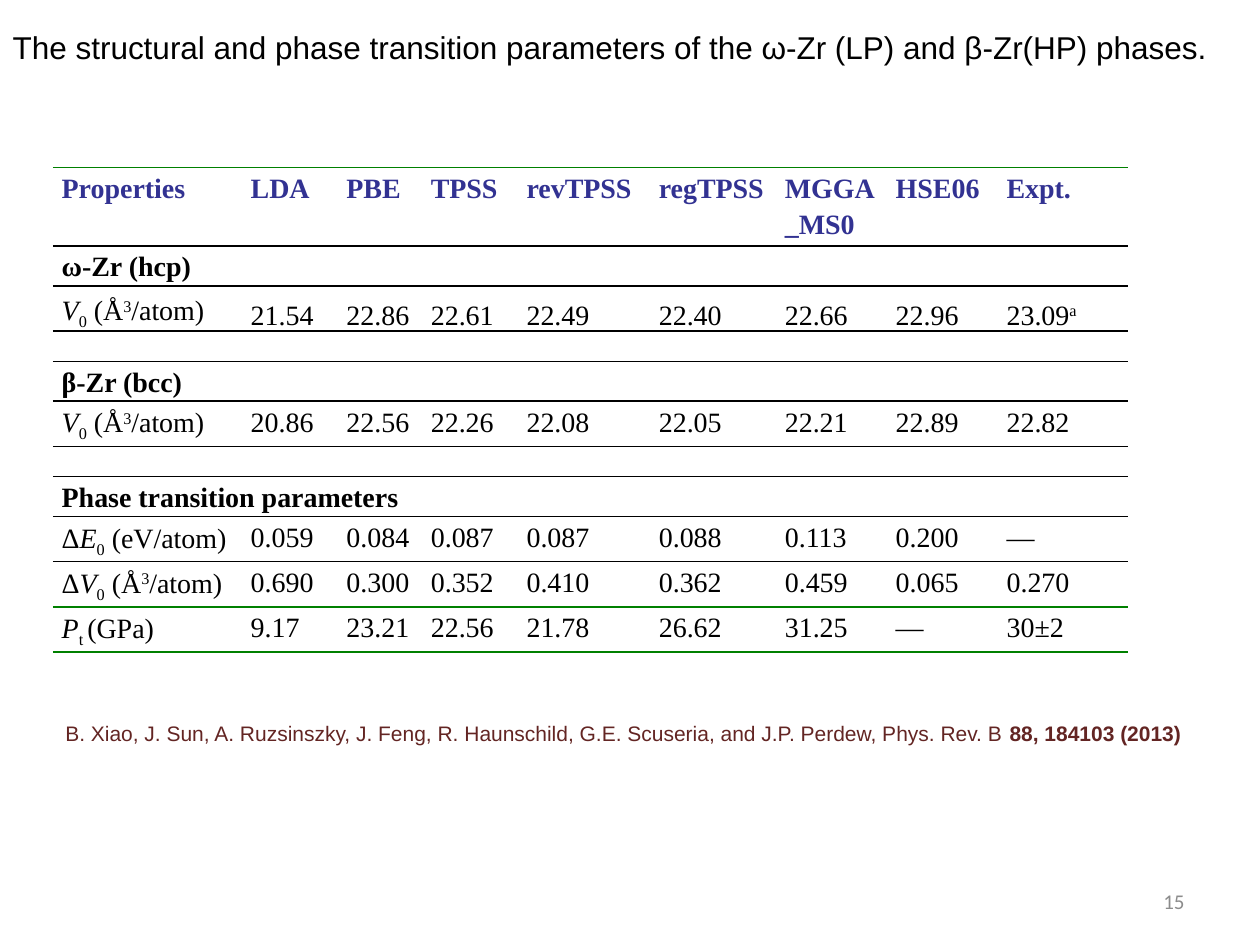
from dataclasses import dataclass

import pptx
import pptx.dml.color
import pptx.enum.text
import pptx.oxml
import pptx.oxml.ns
import pptx.util
from pptx.enum.text import MSO_ANCHOR, PP_ALIGN
from pptx.util import Inches

BLACK = pptx.dml.color.RGBColor(0x00, 0x00, 0x00)
NAVY = pptx.dml.color.RGBColor(0x32, 0x32, 0x92)
GREEN = pptx.dml.color.RGBColor(0x00, 0x80, 0x00)
MAROON = pptx.dml.color.RGBColor(0x63, 0x25, 0x23)
GRAY = pptx.dml.color.RGBColor(0x8C, 0x8C, 0x8C)

SUB, SUPER = -25, 30  # baseline shift in percent
NO_GRID_STYLE = "{2D5ABB26-0587-4C30-8999-92F81FD0307C}"
COLUMN_WIDTHS = [1.5, 0.76, 0.67, 0.76, 1.05, 1, 0.88, 0.88, 1.03]


@dataclass(frozen=True)
class Piece:
    text: str
    italic: bool = False
    bold: bool = False
    baseline: int = 0


@dataclass(frozen=True)
class Row:
    label: list
    values: tuple = ()
    height: float = 0.24
    top: pptx.dml.color.RGBColor | None = None
    bottom: pptx.dml.color.RGBColor | None = None
    color: pptx.dml.color.RGBColor = BLACK
    anchor: MSO_ANCHOR = MSO_ANCHOR.TOP


def bold(text: str) -> list:
    return [Piece(text, bold=True)]


def plain(text: str) -> list:
    return [Piece(text)]


def quantity(symbol: str, index: str, unit: list) -> list:
    return [Piece(symbol, italic=True), Piece(index, baseline=SUB), *unit]


PER_ATOM = [Piece(" (Å"), Piece("3", baseline=SUPER), Piece("/atom)")]
VOLUME = quantity("V", "0", PER_ATOM)
METHODS = "LDA PBE TPSS revTPSS regTPSS MGGA_MS0 HSE06 Expt."


def numbers(text: str) -> tuple:
    return tuple(plain(value) for value in text.split())


ROWS = [
    Row(bold("Properties"), tuple(bold(name) for name in METHODS.split()),
        0.47, GREEN, BLACK, NAVY),
    Row(bold("ω-Zr (hcp)"), top=BLACK, bottom=BLACK),
    Row(VOLUME, (*numbers("21.54 22.86 22.61 22.49 22.40 22.66 22.96"),
                 [Piece("23.09"), Piece("a", baseline=SUPER)]),
        top=BLACK, anchor=MSO_ANCHOR.BOTTOM),
    Row([], bottom=BLACK),
    Row(bold("β-Zr (bcc)"), height=0.28, top=BLACK, bottom=BLACK),
    Row(VOLUME, numbers("20.86 22.56 22.26 22.08 22.05 22.21 22.89 22.82"),
        top=BLACK, bottom=BLACK),
    Row([], top=BLACK),
    Row(bold("Phase transition parameters"), bottom=BLACK),
    Row([Piece("Δ"), *quantity("E", "0", plain(" (eV/atom)"))],
        numbers("0.059 0.084 0.087 0.087 0.088 0.113 0.200 —"), top=BLACK),
    Row([Piece("Δ"), *VOLUME],
        numbers("0.690 0.300 0.352 0.410 0.362 0.459 0.065 0.270"), bottom=GREEN),
    Row(quantity("P", "t ", plain("(GPa)")),
        numbers("9.17 23.21 22.56 21.78 26.62 31.25 — 30±2"), 0.31, GREEN, GREEN),
]


def write(paragraph, pieces: list, size: float, font: str, color) -> None:
    for piece in pieces:
        run = paragraph.add_run()
        run.text = piece.text
        run.font.size = pptx.util.Pt(size)
        run.font.name = font
        run.font.color.rgb = color
        run.font.bold = piece.bold
        run.font.italic = piece.italic
        if piece.baseline:
            run._r.get_or_add_rPr().set("baseline", str(piece.baseline * 1000))


def add_border(cell, side: str, color) -> None:
    cell._tc.get_or_add_tcPr().append(pptx.oxml.parse_xml(
        f'<a:{side} {pptx.oxml.ns.nsdecls("a")} w="12700"><a:solidFill>'
        f'<a:srgbClr val="{color}"/></a:solidFill></a:{side}>'))


def fill_cell(cell, pieces: list, row: Row) -> None:
    cell.margin_left = cell.margin_right = Inches(0.07)
    cell.margin_top, cell.margin_bottom = Inches(0.01), 0
    cell.vertical_anchor = row.anchor
    for side, color in (("lnT", row.top), ("lnB", row.bottom)):
        if color is not None:
            add_border(cell, side, color)
    cell.fill.background()
    paragraph = cell.text_frame.paragraphs[0]
    if pieces:
        paragraph.alignment = PP_ALIGN.JUSTIFY
        paragraph.line_spacing = 1.15
        write(paragraph, pieces, 16, "Times New Roman", row.color)
    else:  # keeps an empty row as low as its set height
        paragraph._p.append(pptx.oxml.parse_xml(
            f'<a:endParaRPr {pptx.oxml.ns.nsdecls("a")} sz="1000"/>'))


def add_parameter_table(slide) -> None:
    frame = slide.shapes.add_table(
        len(ROWS), len(COLUMN_WIDTHS), Inches(0.42), Inches(1.33),
        Inches(sum(COLUMN_WIDTHS)), Inches(sum(row.height for row in ROWS)))
    table = frame.table
    table.first_row = table.horz_banding = False
    table._tbl.tblPr.find(pptx.oxml.ns.qn("a:tableStyleId")).text = NO_GRID_STYLE
    for column, width in zip(table.columns, COLUMN_WIDTHS):
        column.width = Inches(width)
    for index, row in enumerate(ROWS):
        table.rows[index].height = Inches(row.height)
        blanks = [[]] * (len(COLUMN_WIDTHS) - 1)
        for column, pieces in enumerate([row.label, *(row.values or blanks)]):
            fill_cell(table.cell(index, column), pieces, row)
        if not row.values:
            table.cell(index, 0).merge(table.cell(index, len(COLUMN_WIDTHS) - 1))


def add_note(slide, box: tuple, pieces: list, font: str, color):
    note = slide.shapes.add_textbox(*(Inches(length) for length in box))
    note.text_frame.word_wrap = True
    write(note.text_frame.paragraphs[0], pieces, 12, font, color)
    return note.text_frame


def main() -> None:
    deck = pptx.Presentation()
    deck.slide_width, deck.slide_height = Inches(10), Inches(7.5)
    slide = deck.slides.add_slide(deck.slide_layouts[5])

    # Title
    title = slide.shapes.title
    title.left, title.top = Inches(0), Inches(0.17)
    title.width, title.height = Inches(11.83), Inches(0.4)
    title.text_frame.vertical_anchor = MSO_ANCHOR.TOP
    title.text_frame.auto_size = pptx.enum.text.MSO_AUTO_SIZE.SHAPE_TO_FIT_TEXT
    heading = title.text_frame.paragraphs[0]
    heading.alignment = PP_ALIGN.LEFT
    write(heading, plain("The structural and phase transition parameters of the "
                         "ω-Zr (LP) and β-Zr(HP) phases."), 18, "Arial", BLACK)

    add_parameter_table(slide)

    # Slide number
    number = add_note(slide, (7.17, 6.95, 2.33, 0.4), plain("15"), "Calibri", GRAY)
    number.vertical_anchor = MSO_ANCHOR.MIDDLE
    number.paragraphs[0].alignment = PP_ALIGN.RIGHT

    # Citation with a hanging indent
    citation = add_note(
        slide, (0.42, 5.67, 9.33, 0.3),
        [Piece("B. Xiao, J. Sun, A. Ruzsinszky, J. Feng, R. Haunschild, G.E. Scuseria, "
               "and J.P. Perdew, Phys. Rev. B "), *bold("88, 184103 (2013)")],
        "Arial", MAROON)
    indent = citation.paragraphs[0]._p.get_or_add_pPr()
    indent.set("marL", str(Inches(0.25)))
    indent.set("indent", str(-Inches(0.25)))

    deck.save("out.pptx")


if __name__ == "__main__":
    main()
